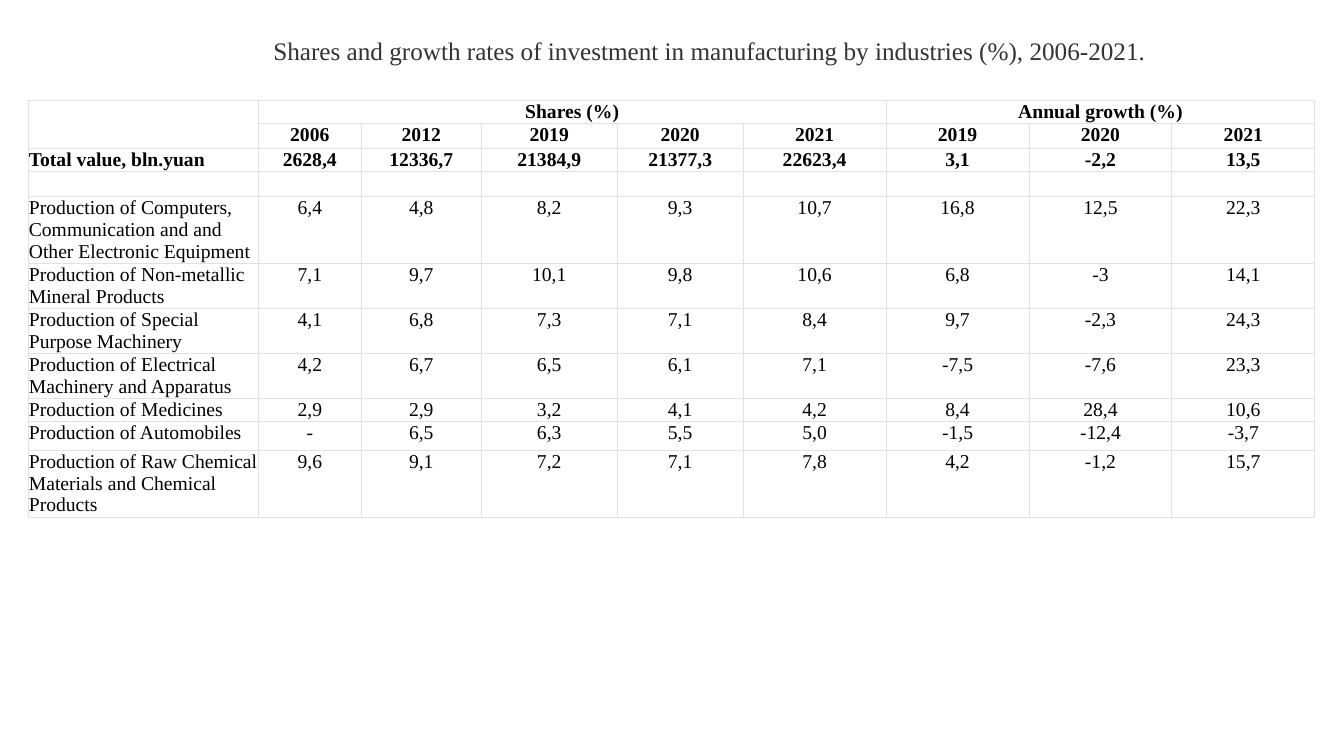
from dataclasses import dataclass

from lxml import etree
from pptx import Presentation
from pptx.dml.color import RGBColor
from pptx.enum.text import MSO_ANCHOR, PP_ALIGN
from pptx.oxml.ns import qn
from pptx.util import Pt

LEFT, CENTER = PP_ALIGN.LEFT, PP_ALIGN.CENTER
TOP = MSO_ANCHOR.TOP
TITLE_ONLY = 5
FACE = "Times New Roman"
INK, TITLE_INK, PAPER, RULE = "000000", "333333", "FFFFFF", "E2E2DC"
RULE_WIDTH = Pt(0.75)
INSET = Pt(0.4)
COLUMN_WIDTHS = [164.3, 73.6, 85.7, 97.1, 90] + [102.1] * 4
LINE = 16.4


@dataclass(frozen=True)
class TableRow:
    label: str
    values: str
    height: float = LINE
    bold: bool = False


@dataclass(frozen=True)
class HeaderSpan:
    text: str
    first: tuple[int, int]
    last: tuple[int, int]


HEADER_SPANS = [
    HeaderSpan("", (0, 0), (1, 0)),
    HeaderSpan("Shares (%)", (0, 1), (0, 5)),
    HeaderSpan("Annual growth (%)", (0, 6), (0, 8)),
]
ROWS = [
    TableRow("", "2006 2012 2019 2020 2021 2019 2020 2021", bold=True),
    TableRow("Total value, bln.yuan",
             "2628,4 12336,7 21384,9 21377,3 22623,4 3,1 -2,2 13,5", bold=True),
    TableRow("", ""),
    TableRow("Production of Computers, Communication and and Other Electronic Equipment",
             "6,4 4,8 8,2 9,3 10,7 16,8 12,5 22,3", 48),
    TableRow("Production of Non-metallic Mineral Products",
             "7,1 9,7 10,1 9,8 10,6 6,8 -3 14,1", 32),
    TableRow("Production of Special Purpose Machinery",
             "4,1 6,8 7,3 7,1 8,4 9,7 -2,3 24,3", 32),
    TableRow("Production of Electrical Machinery and Apparatus",
             "4,2 6,7 6,5 6,1 7,1 -7,5 -7,6 23,3", 32),
    TableRow("Production of Medicines", "2,9 2,9 3,2 4,1 4,2 8,4 28,4 10,6"),
    TableRow("Production of Automobiles",
             "- 6,5 6,3 5,5 5,0 -1,5 -12,4 -3,7", 20.9),
    TableRow("Production of Raw Chemical Materials and Chemical Products",
             "9,6 9,1 7,2 7,1 7,8 4,2 -1,2 15,7", 48),
]
TITLE_BOX = {"left": Pt(188), "top": Pt(21.6), "width": Pt(644.4), "height": Pt(51.1)}
TITLE_FRAME = {"word_wrap": False, "vertical_anchor": TOP}
CELL_FORMAT = {"margin_left": INSET, "margin_right": INSET, "margin_top": INSET,
               "margin_bottom": INSET, "vertical_anchor": TOP}
TABLE_FORMAT = {"first_row": False, "horz_banding": False}


def apply(target: object, values: dict) -> None:
    for name, value in values.items():
        setattr(target, name, value)


def paint(color_holder, hex_color: str) -> None:
    color_holder.rgb = RGBColor.from_string(hex_color)


def write(paragraph, text: str, size: float, color: str, align, bold: bool = False) -> None:
    paragraph.alignment = align
    run = paragraph.add_run()
    run.text = text
    apply(run.font, {"name": FACE, "size": Pt(size), "bold": bold})
    paint(run.font.color, color)


def format_cell(cell) -> None:
    apply(cell, CELL_FORMAT)
    cell.fill.solid()
    paint(cell.fill.fore_color, PAPER)
    properties = cell._tc.get_or_add_tcPr()
    for position, side in enumerate(("lnL", "lnR", "lnT", "lnB")):
        border = etree.Element(qn(f"a:{side}"), w=str(int(RULE_WIDTH)))
        fill = etree.SubElement(border, qn("a:solidFill"))
        etree.SubElement(fill, qn("a:srgbClr"), val=RULE)
        properties.insert(position, border)


def fill_cell(cell, text: str, align, bold: bool) -> None:
    paragraph = cell.text_frame.paragraphs[0]
    if text:
        write(paragraph, text, 14, INK, align, bold)
    else:
        etree.SubElement(paragraph._p, qn("a:endParaRPr"), sz="1400")


def add_title(slide) -> None:
    title = slide.shapes.title
    apply(title, TITLE_BOX)
    apply(title.text_frame, TITLE_FRAME)
    write(title.text_frame.paragraphs[0],
          "Shares and growth rates of investment in manufacturing by industries (%), 2006-2021.",
          18, TITLE_INK, LEFT)


def add_investment_table(slide) -> None:
    heights = [LINE] + [row.height for row in ROWS]
    investment = slide.shapes.add_table(
        len(heights), len(COLUMN_WIDTHS), Pt(20.2), Pt(72),
        Pt(sum(COLUMN_WIDTHS)), Pt(sum(heights))).table
    apply(investment, TABLE_FORMAT)
    for column, width in zip(investment.columns, COLUMN_WIDTHS):
        column.width = Pt(width)
    for row, height in zip(investment.rows, heights):
        row.height = Pt(height)
    for cell in investment.iter_cells():
        format_cell(cell)

    for span in HEADER_SPANS:
        heading = investment.cell(*span.first)
        heading.merge(investment.cell(*span.last))
        fill_cell(heading, span.text, CENTER, True)
    for row_index, row in enumerate(ROWS, start=1):
        values = row.values.split() or [""] * (len(COLUMN_WIDTHS) - 1)
        for column_index, text in enumerate([row.label] + values):
            align = CENTER if column_index else LEFT
            fill_cell(investment.cell(row_index, column_index), text, align, row.bold)


def main() -> None:
    deck = Presentation()
    apply(deck, {"slide_width": Pt(960), "slide_height": Pt(540)})
    slide = deck.slides.add_slide(deck.slide_layouts[TITLE_ONLY])
    add_investment_table(slide)
    add_title(slide)
    deck.save("out.pptx")


if __name__ == "__main__":
    main()
